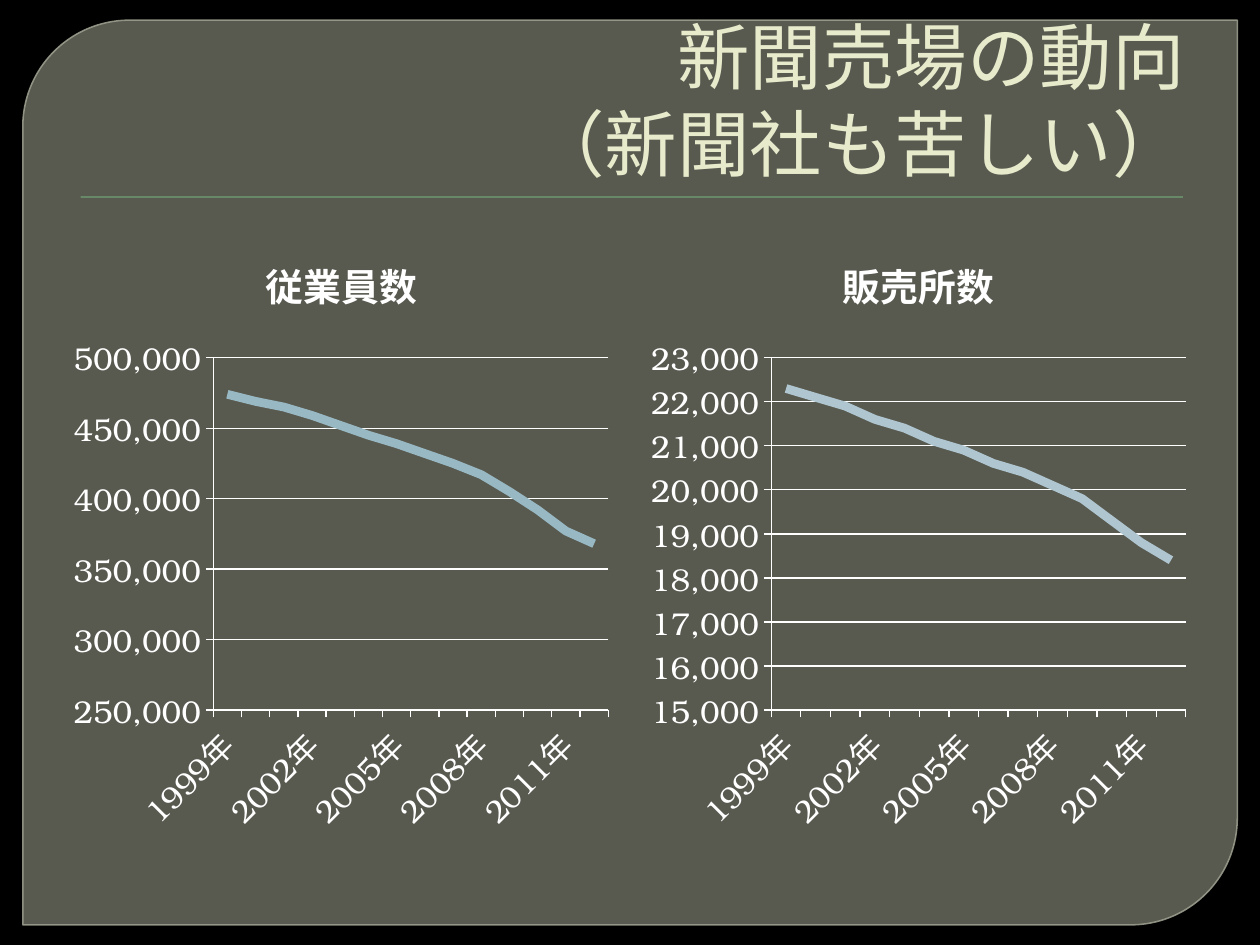
from dataclasses import dataclass

from lxml import etree
from pptx import Presentation
from pptx.chart.data import CategoryChartData
from pptx.dml.color import RGBColor
from pptx.enum import chart as charts, shapes, text
from pptx.oxml.ns import qn
from pptx.util import Pt


@dataclass(frozen=True)
class Theme:
    font: str = "TeX Gyre Bonum"
    background: str = "000000"
    panel: str = "888B7B"
    panel_line: str = "9DA090"
    rule: str = "72A376"
    title: str = "E7EACB"
    chart_text: str = "FFFFFF"
    employees: str = "98B9C3"
    outlets: str = "AFC5CF"
    title_size: float = 41.4
    chart_size: float = 18
    chart_title_size: float = 21.6


def apply(target, values):
    for name, value in values.items():
        setattr(target, name, value)


def add_child(parent, tag, **attributes):
    return etree.SubElement(parent, qn(tag), attributes)


class SlideBuilder:
    def __init__(self, slide, theme):
        self.slide = slide
        self.theme = theme
        self.paint(slide.background.fill, theme.background)

    def paint(self, fill, color, alpha=None):
        fill.solid()
        fill.fore_color.rgb = RGBColor.from_string(color)
        if alpha is not None:
            color_element = fill._xPr.find(qn("a:solidFill"))[0]
            add_child(color_element, "a:alpha", val=str(alpha * 1000))

    def style_font(self, font, size, color, bold=False):
        apply(font, {"name": self.theme.font, "size": Pt(size), "bold": bold})
        font.color.rgb = RGBColor.from_string(color)

    def style_line(self, line, color, width, alpha=None):
        self.paint(line.fill, color, alpha)
        line.width = Pt(width)

    def box(self, kind, bounds, color, alpha=None):
        shape = self.slide.shapes.add_shape(kind, *map(Pt, bounds))
        shape.shadow.inherit = False
        self.paint(shape.fill, color, alpha)
        shape.line.fill.background()
        return shape

    def panel(self, bounds):
        shape = self.box(shapes.MSO_SHAPE.ROUND_2_DIAG_RECTANGLE, bounds, self.theme.panel, 65)
        shape.adjustments[0] = 0.118
        shape.adjustments[1] = 0
        self.style_line(shape.line, self.theme.panel_line, 0.87, 88)

    def rule(self, bounds):
        self.box(shapes.MSO_SHAPE.RECTANGLE, bounds, self.theme.rule)

    def title(self, bounds, wording):
        frame = self.slide.shapes.add_textbox(*map(Pt, bounds)).text_frame
        apply(frame, {"word_wrap": True, "vertical_anchor": text.MSO_ANCHOR.BOTTOM})
        paragraph = frame.paragraphs[0]
        apply(paragraph, {"text": wording, "alignment": text.PP_ALIGN.RIGHT})
        for run in paragraph.runs:
            self.style_font(run.font, self.theme.title_size, self.theme.title)

    def line_chart(self, bounds, heading, series_name, categories, values, color, scale, plot_area):
        data = CategoryChartData(number_format="#,##0")
        data.categories = categories
        data.add_series(series_name, values)
        chart = self.slide.shapes.add_chart(
            charts.XL_CHART_TYPE.LINE, *map(Pt, bounds), data).chart
        theme = self.theme
        self.style_font(chart.font, theme.chart_size, theme.chart_text)
        apply(chart, {"has_legend": False, "has_title": True})
        title_frame = chart.chart_title.text_frame
        title_frame.text = heading
        self.style_font(title_frame.paragraphs[0].runs[0].font,
                        theme.chart_title_size, theme.chart_text, True)
        chart.plots[0].vary_by_categories = False
        series = chart.plots[0].series[0]
        series.smooth = False
        series.marker.style = charts.XL_MARKER_STYLE.NONE
        self.style_line(series.format.line, color, 5)

        minimum, maximum, step = scale
        value_axis, category_axis = chart.value_axis, chart.category_axis
        apply(value_axis, {"minimum_scale": minimum, "maximum_scale": maximum,
                           "major_unit": step, "has_major_gridlines": True})
        apply(value_axis.tick_labels, {"number_format": "#,##0", "number_format_is_linked": False})
        for axis in (value_axis, category_axis):
            axis.major_tick_mark = charts.XL_TICK_MARK.OUTSIDE
            self.style_line(axis.format.line, theme.chart_text, 0.75)
        self.style_line(value_axis.major_gridlines.format.line, theme.chart_text, 0.75)
        self.style_font(category_axis.tick_labels.font, theme.chart_size, theme.chart_text)
        axis_element = category_axis._element
        axis_element.find(qn("c:txPr")).find(qn("a:bodyPr")).set("rot", "-2700000")
        skip = etree.Element(qn("c:tickLblSkip"), val="3")
        axis_element.find(qn("c:noMultiLvlLbl")).addprevious(skip)
        self.place_plot(chart, plot_area)

    def place_plot(self, chart, plot_area):
        area = chart._chartSpace.chart.plotArea
        for previous in area.findall(qn("c:layout")):
            area.remove(previous)
        layout = etree.Element(qn("c:layout"))
        area.insert(0, layout)
        manual = add_child(layout, "c:manualLayout")
        settings = [("layoutTarget", "inner"), ("xMode", "edge"), ("yMode", "edge")]
        for name, value in settings + list(zip("xywh", plot_area)):
            add_child(manual, f"c:{name}", val=str(value))


def main():
    theme = Theme()
    presentation = Presentation()
    apply(presentation, {"slide_width": Pt(720), "slide_height": Pt(540)})
    builder = SlideBuilder(presentation.slides.add_slide(presentation.slide_layouts[6]), theme)
    builder.panel((13, 11.5, 694, 517))
    builder.rule((46, 112.2, 630, 0.7))
    builder.title((36, 20, 648, 90), "新聞売場の動向\v（新聞社も苦しい）")

    years = [f"{year}年" for year in range(1999, 2013)]
    employees = [474000, 469000, 465000, 459000, 452000, 445000, 439000,
                 432000, 425000, 417000, 405000, 392000, 377000, 368000]
    outlets = [22300, 22100, 21900, 21600, 21400, 21100, 20900,
               20600, 20400, 20100, 19800, 19300, 18800, 18400]
    panels = [
        ("従業員数", "従業員数", employees, theme.employees, (250000, 500000, 50000), (0.27, 0.71)),
        ("販売所数", "Series 1", outlets, theme.outlets, (15000, 23000, 1000), (0.235, 0.745)),
    ]
    for index, (heading, name, values, color, scale, (left, width)) in enumerate(panels):
        bounds = (36 + 330 * index, 129.6, 318, 356.4)
        builder.line_chart(bounds, heading, name, years, values, color, scale,
                           (left, 0.21, width, 0.565))
    presentation.save("out.pptx")


if __name__ == "__main__":
    main()
